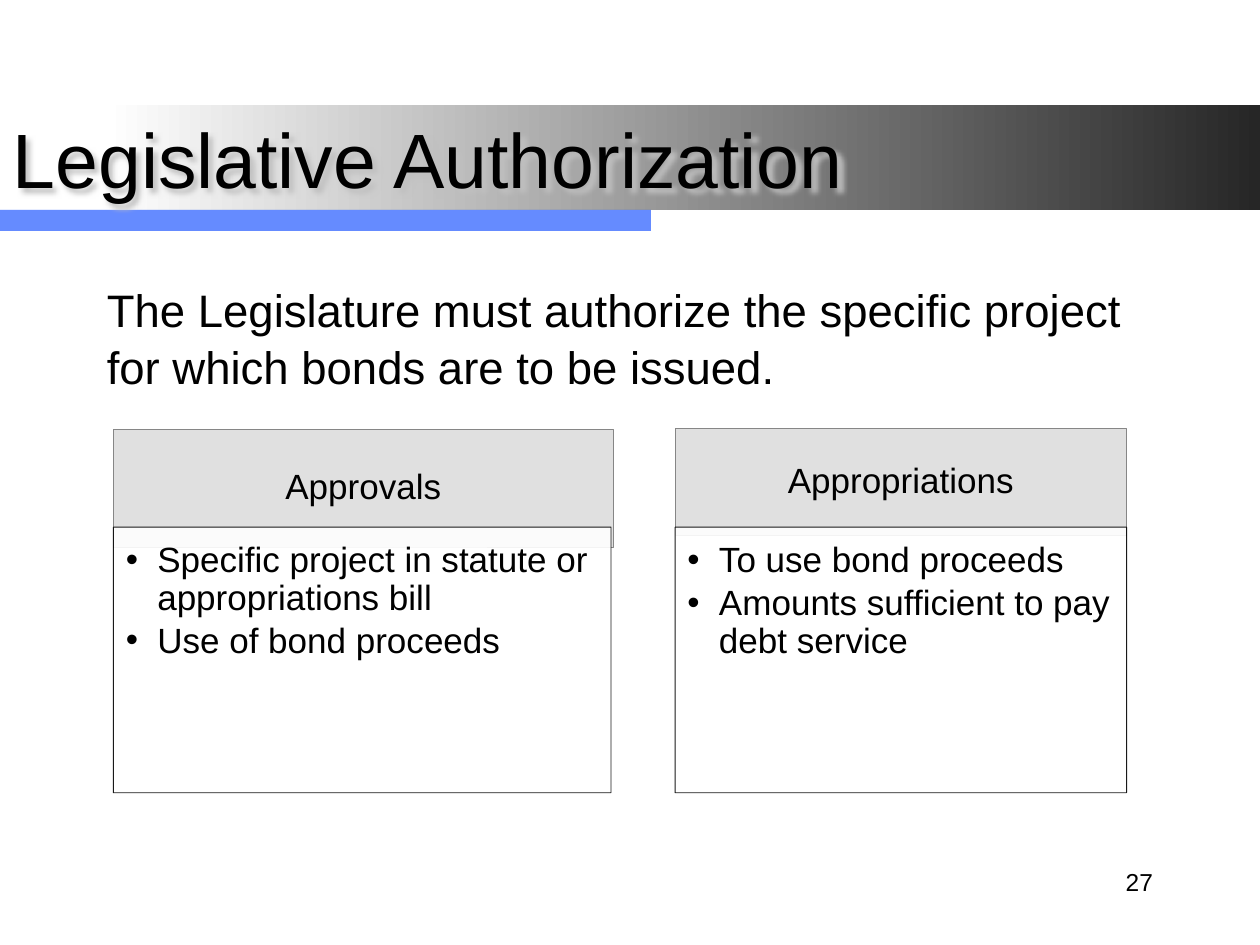
"""Build the Legislative Authorization slide on a grid of 12 columns by 9 rows."""
from lxml.etree import SubElement
from pptx import Presentation
from pptx.dml.color import RGBColor
from pptx.enum.shapes import MSO_SHAPE
from pptx.enum.text import MSO_ANCHOR, PP_ALIGN
from pptx.oxml import parse_xml
from pptx.oxml.ns import nsdecls, qn
from pptx.util import Inches, Pt

COLOURS = {
    "ink": "000000", "paper": "FFFFFF", "band": "262626",
    "bar": "3366FF", "header": "868686", "shadow": "C0C0C0",
}
CELL = Inches(10) / 12
MARGINS = ("margin_left", "margin_top", "margin_right", "margin_bottom")


def add_block(place, fill=None, opacity=100, line=None, line_opacity=100):
    block = page.shapes.add_shape(MSO_SHAPE.RECTANGLE, *(round(CELL * n) for n in place))
    block.shadow.inherit = False
    for part, name, share in ((block.fill, fill, opacity), (block.line.fill, line, line_opacity)):
        if name is None:
            part.background()
            continue
        part.solid()
        part.fore_color.rgb = RGBColor.from_string(COLOURS[name])
        query = "./a:solidFill/a:srgbClr" if part is block.fill else "./a:ln/a:solidFill/a:srgbClr"
        colour = block._element.spPr.xpath(query)[0]
        if share < 100:
            SubElement(colour, qn("a:alpha"), val=str(share * 1000))
    if line:
        block.line.width = Pt(0.5)
    return block


def write(box, lines, size, anchor, insets=(0.1, 0.05, 0.1, 0.05), bullet=False, **layout):
    frame = box.text_frame
    settings = dict(zip(MARGINS, map(Inches, insets)), word_wrap=True, vertical_anchor=anchor)
    for key, value in settings.items():
        setattr(frame, key, value)
    frame.text = "\n".join(lines)
    for para in frame.paragraphs:
        for key, value in layout.items():
            setattr(para, key, value)
        if bullet:
            properties = para._p.get_or_add_pPr()
            properties.set("marL", str(Inches(0.25)))
            properties.set("indent", str(-Inches(0.25)))
            SubElement(properties, qn("a:buFont"), typeface="Arial")
            SubElement(properties, qn("a:buChar"), char="•")
        for span in para.runs:
            for key, value in {"name": "Arial", "size": Pt(size), "bold": False}.items():
                setattr(span.font, key, value)
            span.font.color.rgb = RGBColor.from_string(COLOURS["ink"])


deck = Presentation()
deck.slide_width, deck.slide_height = Inches(10), Inches(7.5)
page = deck.slides.add_slide(deck.slide_layouts[5])

band = add_block((1, 1, 11, 1), "paper")
band.fill.gradient()
band.fill.gradient_angle = 0
for stop, name in zip(band.fill.gradient_stops, ("paper", "band")):
    stop.color.rgb = RGBColor.from_string(COLOURS[name])
for layer in range(2):
    add_block((0, 2, 6.2, 0.2), "bar", 50)

title = page.shapes.title
for key, cells in {"left": 0, "top": 1, "width": 12, "height": 1}.items():
    setattr(title, key, round(CELL * cells))
write(title, ["Legislative Authorization"], 44, MSO_ANCHOR.MIDDLE, alignment=PP_ALIGN.LEFT)
title._element.spPr.append(parse_xml(
    f'<a:effectLst {nsdecls("a")}><a:outerShdw blurRad="38100" dist="38100" dir="2700000">'
    f'<a:srgbClr val="{COLOURS["shadow"]}"/></a:outerShdw></a:effectLst>'))
page.shapes._spTree.append(title._element)

write(add_block((0.9, 2.6, 10.2, 5.4)),
      ["The Legislature must authorize the specific project for which bonds are to be issued."],
      26, MSO_ANCHOR.TOP, alignment=PP_ALIGN.LEFT, line_spacing=1.05, space_after=Pt(6))
write(add_block((8.6, 8.1, 2.5, 0.6)), ["27"], 14, MSO_ANCHOR.MIDDLE, alignment=PP_ALIGN.RIGHT)

cards = [
    ("Approvals", (1.08, 4.09, 4.76, 1.12), 4.74,
     ["Specific project in statute or appropriations bill", "Use of bond proceeds"]),
    ("Appropriations", (6.43, 4.08, 4.3, 1.02), 4.3,
     ["To use bond proceeds", "Amounts sufficient to pay debt service"]),
]
for heading, place, width, points in cards:
    header = add_block(place, "header", 25, "header")
    write(header, [heading], 20, MSO_ANCHOR.MIDDLE, (0.16, 0.09, 0.16, 0.09),
          alignment=PP_ALIGN.CENTER, line_spacing=0.9, space_after=Pt(7))
    panel = add_block((place[0], 5.02, width, 2.53), "paper", 90, "ink", 90)
    write(panel, points, 20, MSO_ANCHOR.TOP, (0.1, 0.12, 0, 0.17), bullet=True,
          alignment=PP_ALIGN.LEFT, line_spacing=0.9, space_after=Pt(3))

deck.save("out.pptx")
